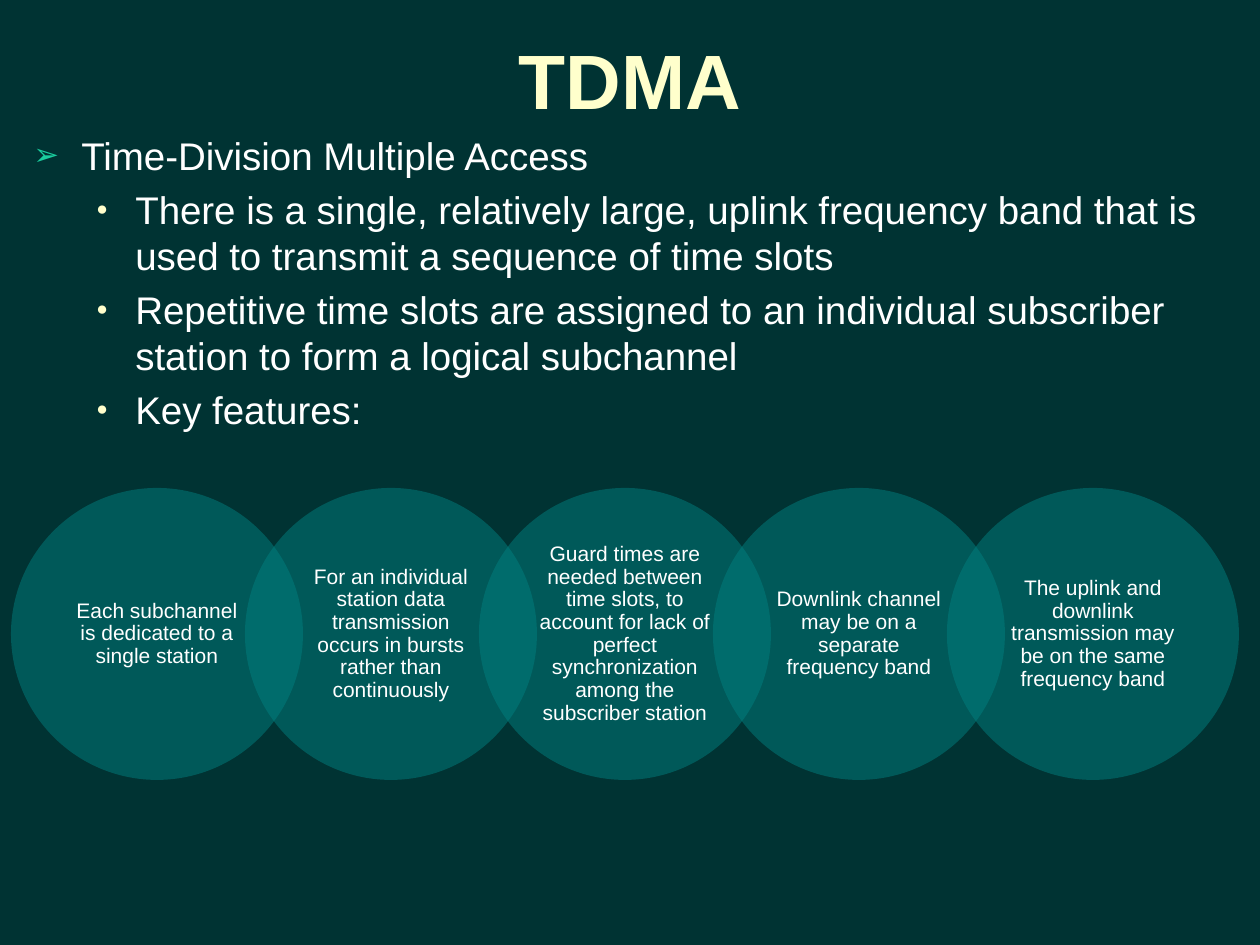
from dataclasses import dataclass

from lxml.etree import SubElement
from pptx import Presentation
from pptx.dml.color import RGBColor
from pptx.enum.shapes import MSO_SHAPE
from pptx.enum.text import MSO_ANCHOR, PP_ALIGN
from pptx.oxml.ns import qn
from pptx.util import Pt


@dataclass(frozen=True)
class Theme:
    font: str = "Arial"
    back: str = "003333"
    title: str = "FFFFCC"
    text: str = "FFFFFF"
    arrow: str = "1ACE9F"
    dot: str = "FFFFCC"
    disc: str = "008080"
    alpha: int = 50
    title_size: int = 44
    body_size: int = 22
    disc_size: int = 12


THEME = Theme()
SCALE = 914400 / 126

# Per level: left margin and hang in px, bullet sign, its colour and percent size
LEVELS = (
    (48, 48, "➢", THEME.arrow, 80),
    (102, 39, "●", THEME.dot, 50),
)
POINTS = (
    (0, "Time-Division Multiple Access"),
    (1, "There is a single, relatively large, uplink frequency band that is "
        "used to transmit a sequence of time slots"),
    (1, "Repetitive time slots are assigned to an individual subscriber "
        "station to form a logical subchannel"),
    (1, "Key features:"),
)
FEATURES = (
    "Each subchannel is dedicated to a single station",
    "For an individual station data transmission occurs in bursts rather than "
    "continuously",
    "Guard times are needed between time slots, to account for lack of perfect "
    "synchronization among the subscriber station",
    "Downlink channel may be on a separate frequency band",
    "The uplink and downlink transmission may be on the same frequency band",
)


def px(*values):
    return [round(value * SCALE) for value in values]


def assign(target, values):
    for name, value in values.items():
        setattr(target, name, value)


def write(para, text, size, color, bold=False, **layout):
    run = para.add_run()
    run.text = text
    assign(run.font, {"name": THEME.font, "size": Pt(size), "bold": bold})
    run.font.color.rgb = RGBColor.from_string(color)
    assign(para, layout)


def add_bullet(para, level):
    margin, hang, sign, color, size = LEVELS[level]
    props = para._p.get_or_add_pPr()
    left, indent = px(margin, -hang)
    props.set("marL", str(left))
    props.set("indent", str(indent))
    tint = SubElement(props, qn("a:buClr"))
    SubElement(tint, qn("a:srgbClr"), val=color)
    SubElement(props, qn("a:buSzPct"), val=str(size * 1000))
    SubElement(props, qn("a:buFont"), typeface=THEME.font)
    SubElement(props, qn("a:buChar"), char=sign)


def add_title(slide, text):
    frame = slide.shapes.add_textbox(*px(63, 0, 1134, 158)).text_frame
    assign(frame, {"word_wrap": True, "vertical_anchor": MSO_ANCHOR.MIDDLE})
    write(frame.paragraphs[0], text, THEME.title_size, THEME.title,
          bold=True, alignment=PP_ALIGN.CENTER)


def add_points(slide, points):
    frame = slide.shapes.add_textbox(*px(21, 126, 1207, 294)).text_frame
    frame.word_wrap = True
    for index, (level, text) in enumerate(points):
        para = frame.add_paragraph() if index else frame.paragraphs[0]
        add_bullet(para, level)
        write(para, text, THEME.body_size, THEME.text,
              level=level, space_before=Pt(THEME.body_size * 0.2))


def add_disc(slide, left, top, size, text):
    disc = slide.shapes.add_shape(MSO_SHAPE.OVAL, *px(left, top, size, size))
    disc.shadow.inherit = False
    disc.line.fill.background()
    disc.fill.solid()
    disc.fill.fore_color.rgb = RGBColor.from_string(THEME.disc)
    tint = disc._element.spPr.find(qn("a:solidFill"))[0]
    SubElement(tint, qn("a:alpha"), val=str(THEME.alpha * 1000))
    side, edge = px(16, 2)
    assign(disc.text_frame, {
        "word_wrap": True, "vertical_anchor": MSO_ANCHOR.MIDDLE,
        "margin_left": side, "margin_right": side,
        "margin_top": edge, "margin_bottom": edge,
    })
    write(disc.text_frame.paragraphs[0], text, THEME.disc_size, THEME.text,
          alignment=PP_ALIGN.CENTER, line_spacing=0.9,
          space_after=Pt(THEME.disc_size * 0.35))


def add_chain(slide, texts):
    """Place a row of equal discs, each overlapping the next by a fifth."""
    left, top, size, pitch = 11, 488, 292, 234
    for index, text in enumerate(texts):
        add_disc(slide, left + index * pitch, top, size, text)


def main():
    deck = Presentation()
    deck.slide_width, deck.slide_height = px(1260, 945)
    slide = deck.slides.add_slide(deck.slide_layouts[6])
    fill = slide.background.fill
    fill.solid()
    fill.fore_color.rgb = RGBColor.from_string(THEME.back)
    add_title(slide, "TDMA")
    add_points(slide, POINTS)
    add_chain(slide, FEATURES)
    deck.save("out.pptx")


if __name__ == "__main__":
    main()
